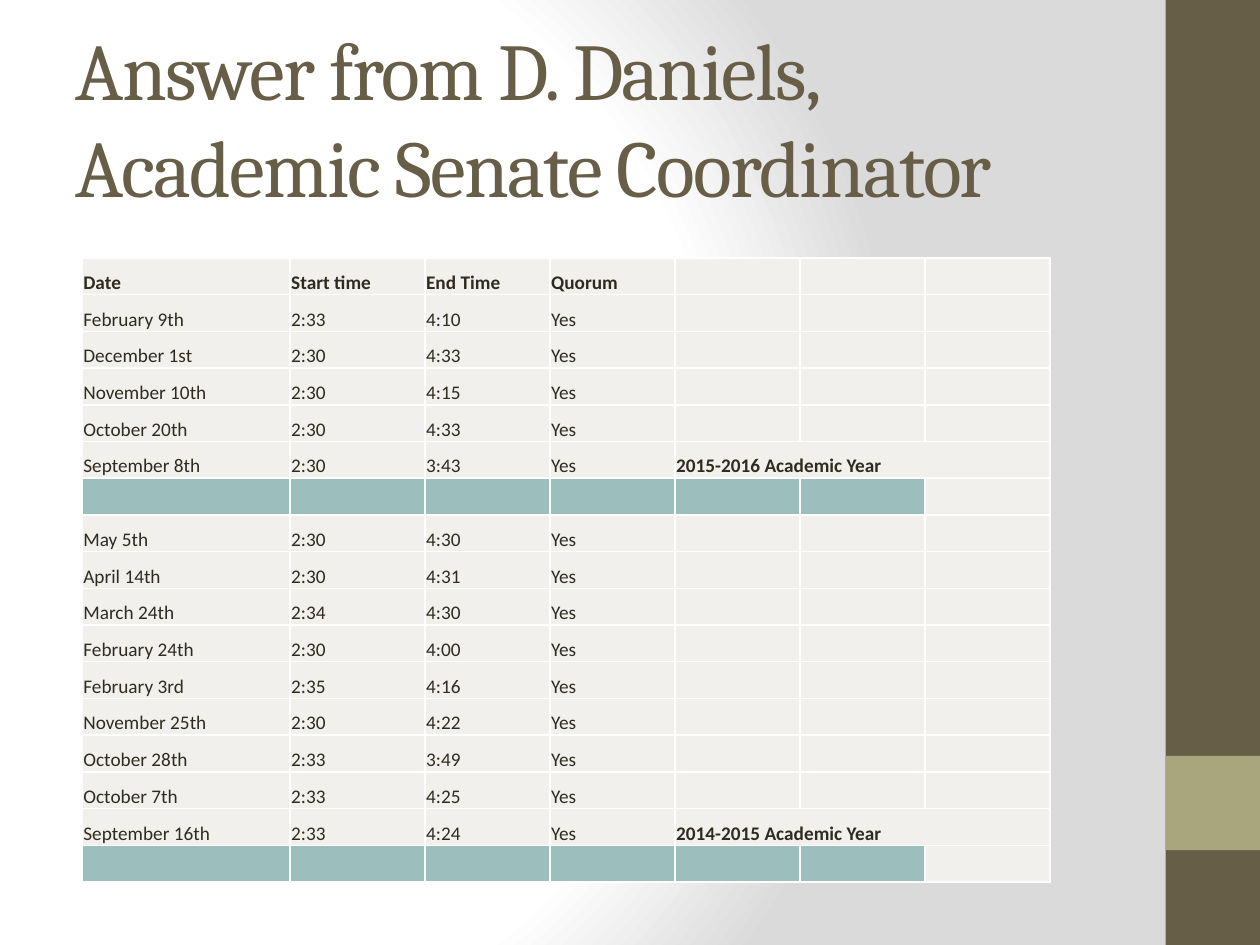
"""Build the slide listing Academic Senate meeting times and quorum."""
from dataclasses import dataclass

from lxml import etree
from pptx import Presentation
from pptx.dml.color import RGBColor
from pptx.enum.shapes import MSO_SHAPE
from pptx.enum.text import MSO_ANCHOR, MSO_AUTO_SIZE, PP_ALIGN
from pptx.oxml import parse_xml
from pptx.oxml.ns import qn
from pptx.util import Cm, Pt

RECTANGLE = MSO_SHAPE.RECTANGLE
MIDDLE, BOTTOM = MSO_ANCHOR.MIDDLE, MSO_ANCHOR.BOTTOM
LEFT = PP_ALIGN.LEFT
NO_AUTOFIT = MSO_AUTO_SIZE.NONE

BROWN, OLIVE, INK = "675E47", "A9A57C", "2F2B20"
PALE, TEAL, WHITE = "F1F0EC", "9CBEBD", "FFFFFF"
COLUMN_WIDTHS = [4.19, 2.72] + [2.52] * 5
ROW_HEIGHT = 0.74
YEAR_COLUMN = 4
DIVIDER_COLUMNS = 6
DRAWING_NS = "http://schemas.openxmlformats.org/drawingml/2006/main"
BACKGROUND = f"""
<p:bg xmlns:p="http://schemas.openxmlformats.org/presentationml/2006/main"
      xmlns:a="{DRAWING_NS}">
  <p:bgPr>
    <a:gradFill rotWithShape="1">
      <a:gsLst>
        <a:gs pos="0"><a:srgbClr val="FFFFFF"/></a:gs>
        <a:gs pos="75000"><a:srgbClr val="FFFFFF"/></a:gs>
        <a:gs pos="100000"><a:srgbClr val="DADADA"/></a:gs>
      </a:gsLst>
      <a:path path="circle">
        <a:fillToRect l="20000" t="50000" r="100000" b="50000"/>
      </a:path>
    </a:gradFill>
    <a:effectLst/>
  </p:bgPr>
</p:bg>"""


@dataclass
class Band:
    top: float
    height: float
    color: str


@dataclass
class Meeting:
    date: str
    start: str
    end: str
    quorum: str = "Yes"


@dataclass
class AcademicYear:
    label: str
    meetings: list[Meeting]


BANDS = [Band(0, 19.05, BROWN), Band(15.24, 1.9, OLIVE)]
HEADER = Meeting("Date", "Start time", "End Time", "Quorum")
YEARS = [
    AcademicYear("2015-2016 Academic Year", [
        Meeting("February 9th", "2:33", "4:10"),
        Meeting("December 1st", "2:30", "4:33"),
        Meeting("November 10th", "2:30", "4:15"),
        Meeting("October 20th", "2:30", "4:33"),
        Meeting("September 8th", "2:30", "3:43"),
    ]),
    AcademicYear("2014-2015 Academic Year", [
        Meeting("May 5th", "2:30", "4:30"),
        Meeting("April 14th", "2:30", "4:31"),
        Meeting("March 24th", "2:34", "4:30"),
        Meeting("February 24th", "2:30", "4:00"),
        Meeting("February 3rd", "2:35", "4:16"),
        Meeting("November 25th", "2:30", "4:22"),
        Meeting("October 28th", "2:33", "3:49"),
        Meeting("October 7th", "2:33", "4:25"),
        Meeting("September 16th", "2:33", "4:24"),
    ]),
]


def rgb(color: str) -> RGBColor:
    """Turn a hex string into a colour."""
    return RGBColor.from_string(color)


def draw_band(slide, band: Band) -> None:
    """Draw one block of the right-hand side bar."""
    block = slide.shapes.add_shape(
        RECTANGLE, Cm(23.5), Cm(band.top), Cm(1.9), Cm(band.height))
    block.shadow.inherit = False
    block.fill.solid()
    block.fill.fore_color.rgb = rgb(band.color)
    block.line.fill.background()


def write_title(slide, wording: str) -> None:
    """Place and format the title placeholder."""
    title = slide.shapes.title
    title.left, title.top = Cm(1.27), Cm(0.76)
    title.width, title.height = Cm(21.16), Cm(3.18)
    frame = title.text_frame
    frame.text = wording
    frame.word_wrap = True
    frame.auto_size = NO_AUTOFIT
    frame.vertical_anchor = MIDDLE
    frame.paragraphs[0].alignment = LEFT
    run = frame.paragraphs[0].runs[0]
    run.font.name, run.font.size = "Cambria", Pt(46)
    run.font.color.rgb = rgb(BROWN)
    run.font._element.set("spc", "-100")


def add_borders(cell, color: str) -> None:
    """Give a cell thin solid borders on all sides."""
    properties = cell._tc.get_or_add_tcPr()
    for side in ("lnL", "lnR", "lnT", "lnB"):
        border = etree.SubElement(properties, qn(f"a:{side}"), w=str(Pt(1)))
        fill = etree.SubElement(border, qn("a:solidFill"))
        etree.SubElement(fill, qn("a:srgbClr"), val=color)


def style_cell(cell, color: str) -> None:
    """Set the borders, fill, margins and base text size of a cell."""
    add_borders(cell, WHITE)
    cell.fill.solid()
    cell.fill.fore_color.rgb = rgb(color)
    cell.margin_left = cell.margin_right = cell.margin_top = Cm(0.02)
    cell.margin_bottom = 0
    cell.vertical_anchor = BOTTOM
    ending = cell.text_frame.paragraphs[0]._p.get_or_add_endParaRPr()
    ending.set("sz", "1100")


def write_cell(cell, wording: str, bold: bool) -> None:
    """Write one table entry."""
    paragraph = cell.text_frame.paragraphs[0]
    paragraph.text = wording
    font = paragraph.runs[0].font
    font.name, font.size, font.bold = "Calibri", Pt(11), bold
    font.color.rgb = rgb(INK)


def write_meeting(table, row: int, meeting: Meeting, bold: bool = False) -> None:
    """Fill the first four columns of a row."""
    entries = (meeting.date, meeting.start, meeting.end, meeting.quorum)
    for column, entry in enumerate(entries):
        write_cell(table.cell(row, column), entry, bold)


def draw_meetings(slide, years: list[AcademicYear]) -> None:
    """Draw the table of meetings, each year closed by a divider row."""
    row_count = 1 + sum(len(year.meetings) + 1 for year in years)
    table = slide.shapes.add_table(
        row_count, len(COLUMN_WIDTHS), Cm(1.66), Cm(5.2),
        Cm(sum(COLUMN_WIDTHS)), Cm(ROW_HEIGHT * row_count)).table
    table.first_row = table.horz_banding = False
    for column, width in zip(table.columns, COLUMN_WIDTHS):
        column.width = Cm(width)
    for row in table.rows:
        row.height = Cm(ROW_HEIGHT)
    for cell in table.iter_cells():
        style_cell(cell, PALE)

    write_meeting(table, 0, HEADER, bold=True)
    row = 1
    for year in years:
        for meeting in year.meetings:
            write_meeting(table, row, meeting)
            row += 1
        label = table.cell(row - 1, YEAR_COLUMN)
        label.merge(table.cell(row - 1, len(COLUMN_WIDTHS) - 1))
        write_cell(label, year.label, bold=True)
        for column in range(DIVIDER_COLUMNS):
            table.cell(row, column).fill.fore_color.rgb = rgb(TEAL)
        row += 1


def main() -> None:
    """Build and save the presentation."""
    presentation = Presentation()
    presentation.slide_width, presentation.slide_height = Cm(25.4), Cm(19.05)
    slide = presentation.slides.add_slide(presentation.slide_layouts[5])
    slide._element.cSld.insert(0, parse_xml(BACKGROUND))
    for band in BANDS:
        draw_band(slide, band)
    write_title(slide, "Answer from D. Daniels, Academic Senate Coordinator")
    draw_meetings(slide, YEARS)
    presentation.save("out.pptx")


if __name__ == "__main__":
    main()
